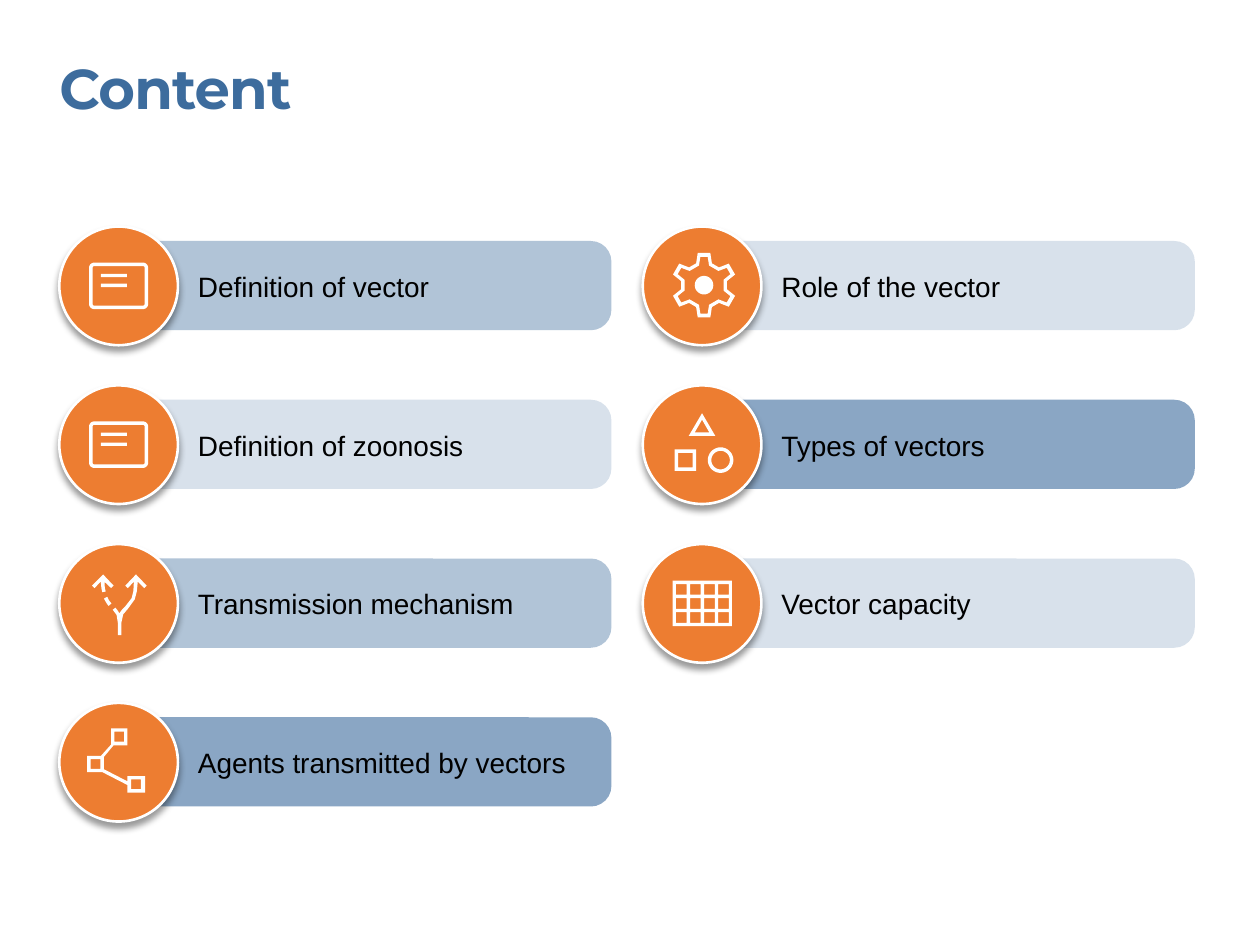
from math import cos, pi, sin

from pptx import Presentation
from pptx.dml.color import RGBColor
from pptx.enum.shapes import MSO_SHAPE
from pptx.enum.text import MSO_ANCHOR, MSO_AUTO_SIZE, PP_ALIGN
from pptx.oxml import parse_xml
from pptx.oxml.ns import nsdecls, qn
from pptx.util import Pt

BLUE = RGBColor(0x3D, 0x6C, 0x9D)
ORANGE = RGBColor(0xED, 0x7D, 0x31)
WHITE = RGBColor(0xFF, 0xFF, 0xFF)
BLACK = RGBColor(0, 0, 0)

ROUND, OVAL = MSO_SHAPE.ROUNDED_RECTANGLE, MSO_SHAPE.OVAL
LEFT, TOP, GROW = PP_ALIGN.LEFT, MSO_ANCHOR.TOP, MSO_AUTO_SIZE.SHAPE_TO_FIT_TEXT

# Centre of the first disc, steps of the grid, and disc size
X, Y, STEP_X, STEP_Y, DISC = 67.8, 163.4, 333.4, 90.72, 67.8


# Outlines: lists of points around the disc centre
def arc(x, y, r, start=0, sweep=360, steps=36):
    turns = [(start + sweep * i / steps) * pi / 180 for i in range(steps + 1)]
    return [(x + r * cos(t), y + r * sin(t)) for t in turns]


def box(x, y, w, h):
    return [(x, y), (x + w, y), (x + w, y + h), (x, y + h)]


def soft(w, h, r):
    ends = [(1, 1), (-1, 1), (-1, -1), (1, -1)]
    return [p for i, (a, b) in enumerate(ends)
            for p in arc(a * (w / 2 - r), b * (h / 2 - r), r, 90 * i, 90, 6)]


def cog(tooth, x, y):
    pts = []
    for i in range(6):
        c, s = cos(i * pi / 3), sin(i * pi / 3)
        pts += [(x + a * c - b * s, y + a * s + b * c) for a, b in tooth]
    return pts


CARD = [soft(33.8, 26.6, 3), soft(29.8, 22.6, 1),
        box(-10.2, -6.9, 15, 1.9), box(-10.2, -1.2, 15, 1.9)]
GEAR = [cog([(-4.5, -12.5), (-3.6, -18.4), (3.6, -18.4), (4.5, -12.5)], 1.1, -0.4),
        cog([(-2.9, -11.2), (-2.1, -16.2), (2.1, -16.2), (2.9, -11.2)], 1.1, -0.4),
        arc(1.1, -0.4, 5.3)]
FORMS = [[(-7.6, -5), (0, -18), (7.6, -5)], [(-4.2, -7), (0, -14.3), (4.2, -7)],
         box(-15.6, 2.7, 12.2, 12.2), box(-13.6, 4.7, 8.2, 8.2),
         arc(10.6, 8.8, 7.3), arc(10.6, 8.8, 5.3)]
GRID = [box(-16.8, -13, 33.8, 26)]
GRID += [box(-14.9 + 8.05 * i, -11.1 + 8.05 * j, 6.1, 6.1)
         for i in range(4) for j in range(3)]
NODES = [[(5, 17.3), (5, 13), (-9.4, 5.6), (-18, 5.6), (-18, -3.6), (-10.1, -3.6),
          (-4.3, -10.1), (-4.3, -19.4), (5, -19.4), (5, -9.6), (-2.9, -9.6),
          (-8.4, -3), (-8.4, 4), (5, 10.9), (5, 7.9), (15.1, 7.9), (15.1, 17.3)]]
NODES += [box(x, y, 5.6, 5.6) for x, y in [(-2.4, -17.4), (-16, -1.8), (7.1, 9.8)]]
FORK = [[(-0.5, 18), (-0.5, 10.8), (-1.2, 6.5), (-3.4, 3.6), (-1.8, 2.4), (-0.6, 4),
         (0.4, 5.6), (1.9, 3.6), (3.8, 1.6), (7.4, -3), (8.4, -7), (8.7, -12.4),
         (5.2, -8.8), (3.8, -10.2), (9.9, -16.6), (16, -10.2), (14.6, -8.8),
         (10.9, -12.5), (10.4, -7), (9.2, -2.4), (5.4, 2.9), (2.6, 6.2),
         (1.6, 10.8), (1.6, 18)],
        [(-9.4, -6.4), (-9.9, -9), (-10.2, -12.5), (-13.8, -8.8), (-15.2, -10.2),
         (-8.9, -16.6), (-2.9, -10.2), (-4.3, -8.8), (-8.1, -12.4), (-7.9, -9),
         (-7.4, -6.8)],
        [(-5.8, 1.4), (-7.2, -0.6), (-8.4, -2.8), (-6.5, -3.8), (-5.6, -1.9), (-4.1, 0)]]

# Column, row, bar opacity in percent, label, icon
TOPICS = [
    (0, 0, 40, "Definition of vector", CARD),
    (0, 1, 20, "Definition of zoonosis", CARD),
    (0, 2, 40, "Transmission mechanism", FORK),
    (0, 3, 60, "Agents transmitted by vectors", NODES),
    (1, 0, 20, "Role of the vector", GEAR),
    (1, 1, 60, "Types of vectors", FORMS),
    (1, 2, 20, "Vector capacity", GRID),
]


class Deck:
    def __init__(self):
        self.prs = Presentation()
        self.prs.slide_width, self.prs.slide_height = Pt(720), Pt(540)
        self.slide = self.prs.slides.add_slide(self.prs.slide_layouts[5])
        self.shapes = self.slide.shapes

    def text(self, shape, words, size, font, color, bold=False):
        frame = shape.text_frame
        frame.word_wrap, frame.auto_size = True, GROW
        frame.vertical_anchor = TOP
        frame.margin_left = frame.margin_right = 0
        frame.margin_top = frame.margin_bottom = 0
        para = frame.paragraphs[0]
        para.alignment = LEFT
        run = para.add_run()
        run.text = words
        run.font.size, run.font.name, run.font.bold = Pt(size), font, bold
        run.font.color.rgb = color
        return run

    def title(self, words):
        shape = self.shapes.title
        shape.left, shape.top = Pt(33.9), Pt(30.4)
        shape.width, shape.height = Pt(615.6), Pt(39)
        run = self.text(shape, words, 32, "Montserrat", BLUE, True)
        run.font._element.set("spc", "-50")

    def label(self, x, y, words):
        shape = self.shapes.add_textbox(Pt(x), Pt(y), Pt(216.7), Pt(19.4))
        self.text(shape, words, 16, "Arial", BLACK)

    def bar(self, x, y, alpha):
        shape = self.shapes.add_shape(ROUND, Pt(x), Pt(y), Pt(281.6), Pt(51))
        shape.adjustments[0] = 0.23
        shape.shadow.inherit = False
        shape.fill.solid()
        shape.fill.fore_color.rgb = BLUE
        shape.line.fill.background()
        tone = shape.element.spPr.find(".//" + qn("a:srgbClr"))
        tone.append(parse_xml(f'<a:alpha {nsdecls("a")} val="{alpha * 1000}"/>'))

    def disc(self, x, y):
        shape = self.shapes.add_shape(
            OVAL, Pt(x - DISC / 2), Pt(y - DISC / 2), Pt(DISC), Pt(DISC))
        shape.fill.solid()
        shape.fill.fore_color.rgb = ORANGE
        shape.line.color.rgb, shape.line.width = WHITE, Pt(1.5)
        shape.shadow.inherit = False
        shape.element.spPr.find(qn("a:effectLst")).append(parse_xml(
            f'<a:outerShdw {nsdecls("a")} blurRad="{Pt(4)}" dist="{Pt(3)}" '
            'dir="5400000" algn="t" rotWithShape="0"><a:srgbClr val="000000">'
            '<a:alpha val="40000"/></a:srgbClr></a:outerShdw>'))

    def icon(self, x, y, loops):
        pen = None
        for loop in loops:
            pts = [(Pt(x + a), Pt(y + b)) for a, b in loop]
            if pen is None:
                pen = self.shapes.build_freeform(*pts[0])
            else:
                pen.move_to(*pts[0])
            pen.add_line_segments(pts[1:], close=True)
        shape = pen.convert_to_shape()
        shape.shadow.inherit = False
        shape.fill.solid()
        shape.fill.fore_color.rgb = WHITE
        shape.line.fill.background()


def main():
    deck = Deck()
    deck.title("Content")
    for col, row, alpha, words, loops in TOPICS:
        x, y = X + col * STEP_X, Y + row * STEP_Y
        deck.bar(x, y - 25.7, alpha)
        deck.label(x + 45.3, y - 9.4, words)
        deck.disc(x, y)
        deck.icon(x, y, loops)
    deck.prs.save("out.pptx")


if __name__ == "__main__":
    main()
